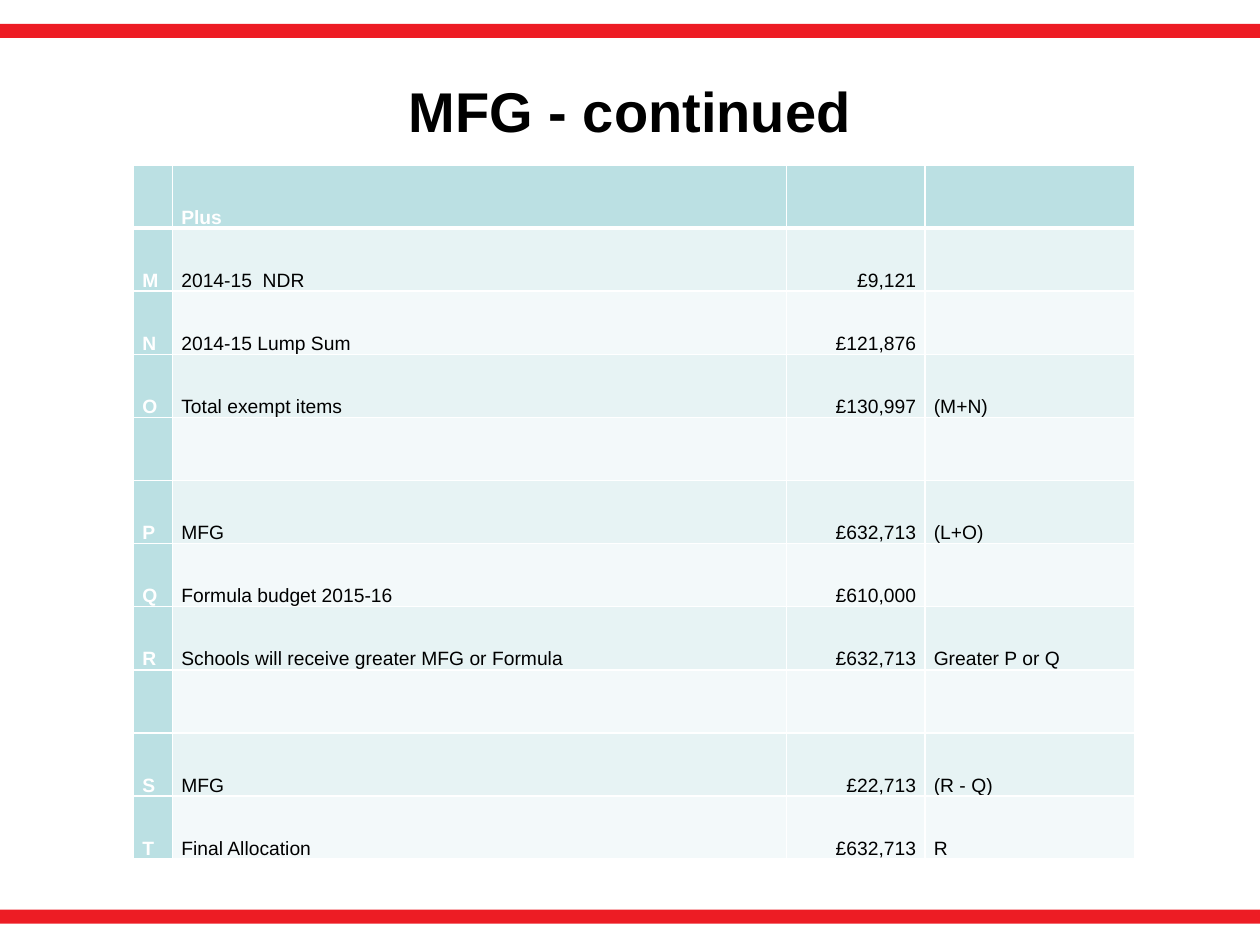
from pptx import Presentation
from pptx.dml.color import RGBColor
from pptx.enum.shapes import MSO_SHAPE
from pptx.enum.text import MSO_ANCHOR, PP_ALIGN
from pptx.oxml import parse_xml
from pptx.oxml.ns import nsdecls
from pptx.util import Inches, Pt

RECTANGLE = MSO_SHAPE.RECTANGLE
MIDDLE, BOTTOM = MSO_ANCHOR.MIDDLE, MSO_ANCHOR.BOTTOM
LEFT, CENTER, RIGHT = PP_ALIGN.LEFT, PP_ALIGN.CENTER, PP_ALIGN.RIGHT

FONT = "Arial"
TITLE_ONLY = 5
COLORS = {
    "bar": "ED1C24",
    "heading": "BBE0E3",
    "odd_row": "E7F3F4",
    "even_row": "F3F9FA",
    "white": "FFFFFF",
    "black": "000000",
}
ALLOCATION = [
    ("", "Plus", "", ""),
    ("M", "2014-15  NDR", "£9,121", ""),
    ("N", "2014-15 Lump Sum", "£121,876", ""),
    ("O", "Total exempt items", "£130,997", "(M+N)"),
    ("", "", "", ""),
    ("P", "MFG", "£632,713", "(L+O)"),
    ("Q", "Formula budget 2015-16", "£610,000", ""),
    ("R", "Schools will receive greater MFG or Formula", "£632,713", "Greater P or Q"),
    ("", "", "", ""),
    ("S", "MFG", "£22,713", "(R - Q)"),
    ("T", "Final Allocation", "£632,713", "R"),
]
COLUMN_SHARES = (0.31, 4.88, 1.1, 1.67)
AMOUNT_COLUMN = 2


def rgb(name):
    return RGBColor.from_string(COLORS[name])


def style_font(font, size, color, bold):
    font.name = FONT
    font.size = Pt(size)
    font.bold = bold
    font.color.rgb = rgb(color)


def add_bar(slide, left, top, width, height):
    bar = slide.shapes.add_shape(RECTANGLE, left, top, width, height)
    bar.shadow.inherit = False
    bar.fill.solid()
    bar.fill.fore_color.rgb = rgb("bar")
    bar.line.fill.background()


def place_title(slide, left, top, width, height):
    title = slide.shapes.title
    title.left, title.top, title.width, title.height = left, top, width, height
    frame = title.text_frame
    frame.text = "MFG - continued"
    frame.vertical_anchor = MIDDLE
    frame.margin_bottom = Inches(0.15)
    heading = frame.paragraphs[0]
    heading.alignment = CENTER
    style_font(heading.runs[0].font, 32, "black", True)


def set_borders(cell, top_width, bottom_width):
    """Draw white rules round a cell; the widths are in points."""
    widths = {"lnL": 1, "lnR": 1, "lnT": top_width, "lnB": bottom_width}
    properties = cell._tc.get_or_add_tcPr()
    for position, (side, width) in enumerate(widths.items()):
        properties.insert(position, parse_xml(
            f'<a:{side} {nsdecls("a")} w="{Pt(width)}"><a:solidFill>'
            f'<a:srgbClr val="{COLORS["white"]}"/></a:solidFill></a:{side}>'))


def fill_cell(cell, text, row, column):
    is_heading = row == 0 or column == 0
    band = "odd_row" if row % 2 else "even_row"
    cell.fill.solid()
    cell.fill.fore_color.rgb = rgb("heading" if is_heading else band)
    set_borders(cell, 3 if row == 1 else 1, 3 if row == 0 else 1)
    if not text:
        return
    cell.vertical_anchor = BOTTOM
    cell.margin_left = cell.margin_right = Inches(0.07)
    cell.margin_top = cell.margin_bottom = 0
    entry = cell.text_frame.paragraphs[0]
    entry.text = text
    entry.alignment = RIGHT if column == AMOUNT_COLUMN else LEFT
    entry.line_spacing = 1.15
    entry.space_after = Pt(10)
    style_font(entry.runs[0].font, 11, "white" if is_heading else "black", is_heading)


def add_allocation_table(slide, left, top, width, height):
    table = slide.shapes.add_table(
        len(ALLOCATION), len(COLUMN_SHARES), left, top, width, height).table
    table.first_col = True
    for column, share in zip(table.columns, COLUMN_SHARES):
        column.width = int(width * share / sum(COLUMN_SHARES))
    for row, entries in enumerate(ALLOCATION):
        for column, text in enumerate(entries):
            fill_cell(table.cell(row, column), text, row, column)


def main():
    deck = Presentation()
    deck.slide_width, deck.slide_height = Inches(10), Inches(7.5)
    slide = deck.slides.add_slide(deck.slide_layouts[TITLE_ONLY])
    for top in (0.19, 7.22):
        add_bar(slide, 0, Inches(top), deck.slide_width, Inches(0.11))
    place_title(slide, Inches(0.5), Inches(0.3), Inches(9), Inches(1.25))
    add_allocation_table(slide, Inches(1.06), Inches(1.31), Inches(7.95), Inches(5.51))
    deck.save("out.pptx")


if __name__ == "__main__":
    main()
